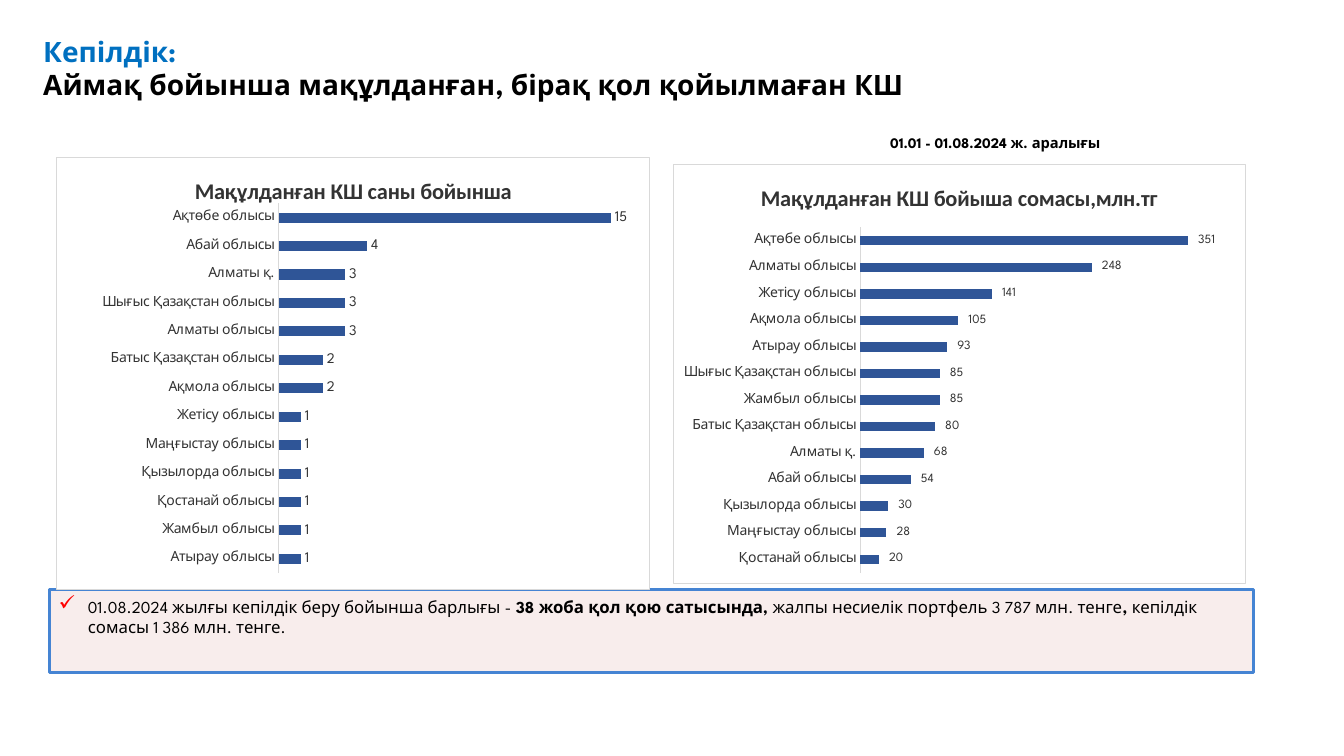
import dataclasses

import lxml.etree
import pptx
import pptx.chart.data
import pptx.dml.color
import pptx.enum.chart
import pptx.enum.shapes
import pptx.enum.text
import pptx.oxml
import pptx.oxml.ns
import pptx.util

qn = pptx.oxml.ns.qn


@dataclasses.dataclass(frozen=True)
class Theme:
    """Colours, fonts and type sizes of the slide."""
    accent: str = "0070C0"
    ink: str = "000000"
    soft_ink: str = "333333"
    bar: str = "2F5597"
    hairline: str = "D9D9D9"
    paper: str = "FFFFFF"
    note_fill: str = "F2DCDB"
    note_line: str = "4584D3"
    check: str = "FF0000"
    text_font: str = "League Spartan"
    chart_font: str = "Calibri"
    heading: float = 20
    chart_title: float = 16
    note: float = 12
    caption: float = 10.5
    axis: float = 10


@dataclasses.dataclass(frozen=True)
class Panel:
    """Contents of one bar chart; plot holds percentages of its box."""
    title: str
    rows: tuple
    maximum: int
    plot: tuple
    label_size: float
    number_format: str


THEME = Theme()
SLIDE_WIDTH = pptx.util.Inches(13.33)
SLIDE_HEIGHT = pptx.util.Inches(7.5)
COUNT_PANEL = Panel(
    "Мақұлданған КШ саны бойынша",
    (("Атырау облысы", 1), ("Жамбыл облысы", 1), ("Қостанай облысы", 1),
     ("Қызылорда облысы", 1), ("Маңғыстау облысы", 1), ("Жетісу облысы", 1),
     ("Ақмола облысы", 2), ("Батыс Қазақстан облысы", 2), ("Алматы облысы", 3),
     ("Шығыс Қазақстан облысы", 3), ("Алматы қ.", 3), ("Абай облысы", 4),
     ("Ақтөбе облысы", 15)),
    16, (37.4, 10.6, 59.8, 85.7), 10.5, "General")
AMOUNT_PANEL = Panel(
    "Мақұлданған КШ бойыша сомасы,млн.тг",
    (("Қостанай облысы", 20), ("Маңғыстау облысы", 28), ("Қызылорда облысы", 30),
     ("Абай облысы", 54), ("Алматы қ.", 68), ("Батыс Қазақстан облысы", 80),
     ("Жамбыл облысы", 85), ("Шығыс Қазақстан облысы", 85), ("Атырау облысы", 93),
     ("Ақмола облысы", 105), ("Жетісу облысы", 141), ("Алматы облысы", 248),
     ("Ақтөбе облысы", 351)),
    400, (32.7, 15, 65.2, 82.5), 9,
    '_-* #\\ ##0_р_._-;\\-* #\\ ##0_р_._-;_-* "-"')


def share(left, top, width, height):
    """Turn percentages of the slide into a box."""
    return (round(SLIDE_WIDTH * left / 100), round(SLIDE_HEIGHT * top / 100),
            round(SLIDE_WIDTH * width / 100), round(SLIDE_HEIGHT * height / 100))


def rgb(color):
    """Return a colour object for a hex string."""
    return pptx.dml.color.RGBColor.from_string(color)


def style_font(font, size, color, bold=False, name=THEME.text_font):
    """Apply face, size, weight and colour to a font."""
    font.name = name
    font.size = pptx.util.Pt(size)
    font.bold = bold
    font.color.rgb = rgb(color)


def add_span(para, text, size, color=THEME.ink, bold=False):
    """Append one styled run to a paragraph."""
    span = para.add_run()
    span.text = text
    style_font(span.font, size, color, bold)


def add_heading(page, box):
    """Place the two-line heading."""
    frame = page.shapes.add_textbox(*box).text_frame
    frame.word_wrap = True
    para = frame.paragraphs[0]
    add_span(para, "Кепілдік:", THEME.heading, THEME.accent, True)
    para.add_line_break()
    add_span(para, "Аймақ бойынша мақұлданған, бірақ қол қойылмаған КШ",
             THEME.heading, bold=True)


def add_period(page, box):
    """Place the reporting period caption."""
    frame = page.shapes.add_textbox(*box).text_frame
    frame.word_wrap = False
    add_span(frame.paragraphs[0], "01.01 - 01.08.2024 ж. аралығы", THEME.caption, bold=True)


def add_check_bullet(para):
    """Give a paragraph a hanging check mark."""
    props = para._p.get_or_add_pPr()
    props.set("marL", str(pptx.util.Inches(0.3)))
    props.set("indent", str(pptx.util.Inches(-0.29)))
    color = lxml.etree.SubElement(props, qn("a:buClr"))
    lxml.etree.SubElement(color, qn("a:srgbClr"), val=THEME.check)
    lxml.etree.SubElement(props, qn("a:buSzPct"), val="125000")
    lxml.etree.SubElement(props, qn("a:buChar"), char="✓")


def add_note(page, box):
    """Place the summary panel under the charts."""
    note = page.shapes.add_shape(pptx.enum.shapes.MSO_SHAPE.RECTANGLE, *box)
    note.shadow.inherit = False
    note.fill.solid()
    note.fill.fore_color.rgb = rgb(THEME.note_fill)
    tint = note._element.spPr.find(qn("a:solidFill"))[0]
    lxml.etree.SubElement(tint, qn("a:alpha"), val="50000")
    note.line.color.rgb = rgb(THEME.note_line)
    note.line.width = pptx.util.Pt(2)
    frame = note.text_frame
    frame.word_wrap = True
    frame.vertical_anchor = pptx.enum.text.MSO_ANCHOR.TOP
    frame.margin_left = frame.margin_right = pptx.util.Inches(0.08)
    frame.margin_top = pptx.util.Inches(0.07)
    frame.margin_bottom = pptx.util.Inches(0.04)
    para = frame.paragraphs[0]
    add_check_bullet(para)
    para.alignment = pptx.enum.text.PP_ALIGN.LEFT
    para.space_after = pptx.util.Pt(6)
    for text, bold in (("01.08.2024 жылғы кепілдік беру бойынша барлығы - ", False),
                       ("38 жоба қол қою сатысында, ", True),
                       ("жалпы несиелік портфель 3 787 млн. тенге", False),
                       (", ", True),
                       ("кепілдік сомасы 1 386 млн. тенге.", False)):
        add_span(para, text, THEME.note, bold=bold)


def frame_chart(chart, plot):
    """Fill and outline the chart area and fix its inner plot area."""
    area = pptx.oxml.parse_xml(
        f'<c:spPr {pptx.oxml.ns.nsdecls("c", "a")}>'
        f'<a:solidFill><a:srgbClr val="{THEME.paper}"/></a:solidFill>'
        f'<a:ln w="9525"><a:solidFill><a:srgbClr val="{THEME.hairline}"/></a:solidFill></a:ln>'
        '</c:spPr>')
    space = chart._chartSpace
    space.find(qn("c:chart")).addnext(area)
    plot_area = space.find(qn("c:chart")).find(qn("c:plotArea"))
    for old in plot_area.findall(qn("c:layout")):
        plot_area.remove(old)
    layout = lxml.etree.Element(qn("c:layout"))
    manual = lxml.etree.SubElement(layout, qn("c:manualLayout"))
    lxml.etree.SubElement(manual, qn("c:layoutTarget"), val="inner")
    for tag in ("xMode", "yMode"):
        lxml.etree.SubElement(manual, qn(f"c:{tag}"), val="edge")
    for tag, percent in zip("xywh", plot):
        lxml.etree.SubElement(manual, qn(f"c:{tag}"), val=f"{percent / 100:.3f}")
    plot_area.insert(0, layout)


def add_region_chart(page, box, panel):
    """Place one bar chart of regions."""
    regions, values = zip(*panel.rows)
    data = pptx.chart.data.CategoryChartData()
    data.categories = regions
    data.add_series(panel.title, values)
    chart = page.shapes.add_chart(
        pptx.enum.chart.XL_CHART_TYPE.BAR_CLUSTERED, *box, data).chart
    style_font(chart.font, THEME.axis, THEME.ink, name=THEME.chart_font)
    chart.has_legend = False
    chart.has_title = True
    span = chart.chart_title.text_frame.paragraphs[0].add_run()
    span.text = panel.title
    style_font(span.font, THEME.chart_title, THEME.soft_ink, True, THEME.chart_font)
    axis = chart.category_axis
    axis.major_tick_mark = pptx.enum.chart.XL_TICK_MARK.NONE
    axis.format.line.color.rgb = rgb(THEME.hairline)
    axis.format.line.width = pptx.util.Pt(0.75)
    style_font(axis.tick_labels.font, THEME.axis, THEME.soft_ink)
    scale = chart.value_axis
    scale.visible = scale.has_major_gridlines = False
    scale.minimum_scale, scale.maximum_scale = 0, panel.maximum
    bars = chart.plots[0]
    bars.gap_width = 182
    bars.vary_by_categories = False
    fill = bars.series[0].format.fill
    fill.solid()
    fill.fore_color.rgb = rgb(THEME.bar)
    labels = bars.series[0].data_labels
    labels.show_value = True
    labels.position = pptx.enum.chart.XL_LABEL_POSITION.OUTSIDE_END
    labels.number_format = panel.number_format
    labels.number_format_is_linked = False
    style_font(labels.font, panel.label_size, THEME.soft_ink)
    frame_chart(chart, panel.plot)


def main():
    """Build the slide and save the deck."""
    deck = pptx.Presentation()
    deck.slide_width, deck.slide_height = SLIDE_WIDTH, SLIDE_HEIGHT
    page = deck.slides.add_slide(deck.slide_layouts[6])
    add_heading(page, share(2.48, 3.87, 67.37, 14.8))
    add_period(page, share(65.49, 17.07, 17.7, 3.73))
    add_note(page, share(3.68, 78, 89.57, 10.93))
    add_region_chart(page, share(4.2, 20.8, 44.19, 57.2), COUNT_PANEL)
    add_region_chart(page, share(50.04, 21.73, 42.69, 55.47), AMOUNT_PANEL)
    deck.save("out.pptx")


if __name__ == "__main__":
    main()
